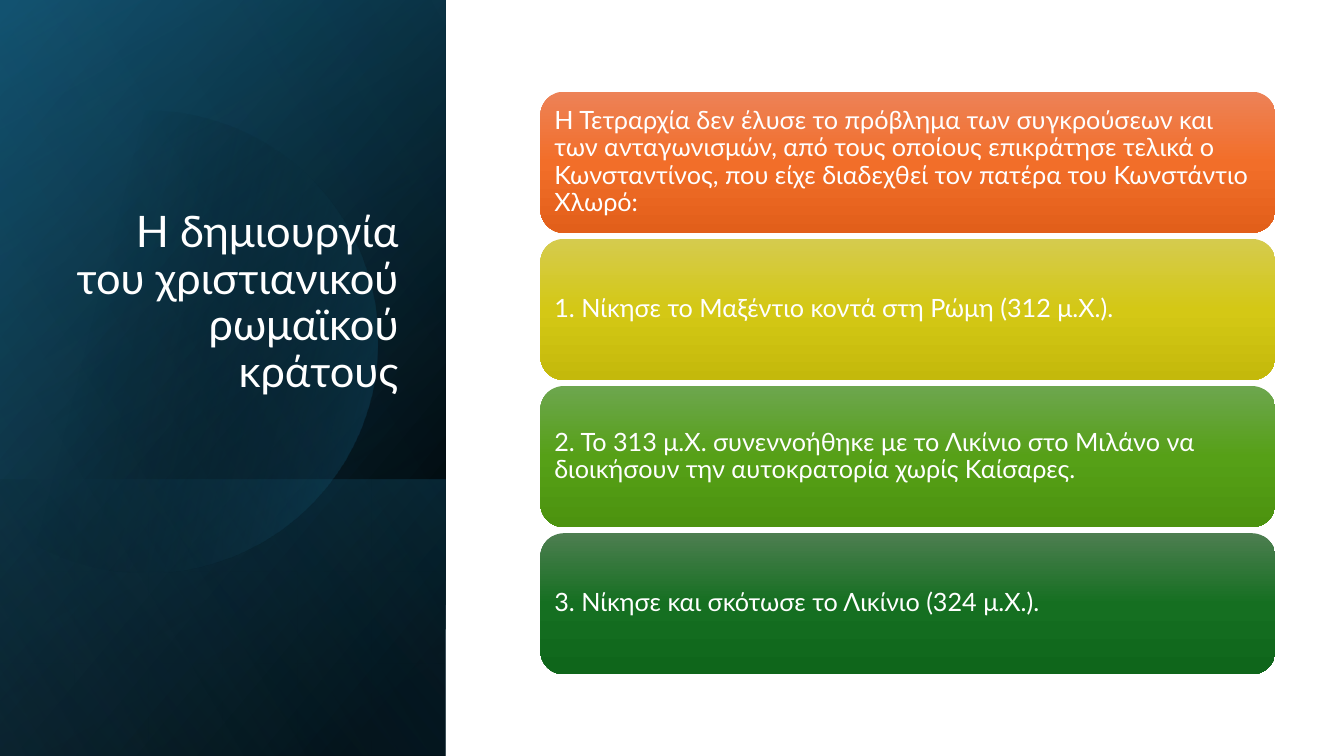
from dataclasses import dataclass
from math import cos, radians, sin

from lxml import etree
from pptx import Presentation
from pptx.dml.color import RGBColor
from pptx.enum.shapes import MSO_SHAPE
from pptx.enum.text import MSO_ANCHOR, PP_ALIGN
from pptx.oxml.ns import qn
from pptx.util import Inches, Pt

RECT = MSO_SHAPE.RECTANGLE
ROUND = MSO_SHAPE.ROUNDED_RECTANGLE
MIDDLE = MSO_ANCHOR.MIDDLE
BOTTOM = MSO_ANCHOR.BOTTOM
LEFT = PP_ALIGN.LEFT
RIGHT = PP_ALIGN.RIGHT


@dataclass(frozen=True)
class Theme:
    font: str = "Lato"
    white: str = "FFFFFF"
    black: str = "000000"
    deep: str = "104862"
    teal: str = "156082"
    sky: str = "46B1E1"
    title: int = 31
    body: int = 18
    orange: tuple = ("ED8257", "F26E29", "E25F1A")
    yellow: tuple = ("D5CB4E", "D4C815", "C4B90B")
    lime: tuple = ("6DA64E", "56A017", "4C930F")
    green: tuple = ("4D7E50", "156F21", "0F661B")


THEME = Theme()

TITLE = "Η δημιουργία του χριστιανικού ρωμαϊκού κράτους"
CARDS = [
    ("Η Τετραρχία δεν έλυσε το πρόβλημα των συγκρούσεων και των "
     "ανταγωνισμών, από τους οποίους επικράτησε τελικά ο Κωνσταντίνος, "
     "που είχε διαδεχθεί τον πατέρα του Κωνστάντιο Χλωρό:", THEME.orange),
    ("1. Νίκησε το Μαξέντιο κοντά στη Ρώμη (312 μ.Χ.).", THEME.yellow),
    ("2. Το 313 μ.Χ. συνεννοήθηκε με το Λικίνιο στο Μιλάνο να "
     "διοικήσουν την αυτοκρατορία χωρίς Καίσαρες.", THEME.lime),
    ("3. Νίκησε και σκότωσε το Λικίνιο (324 μ.Χ.).", THEME.green),
]


def shade(shape, stops, angle):
    shape.shadow.inherit = False
    shape.line.fill.background()
    shape.fill.gradient()
    shape.fill.gradient_angle = 360 - angle
    ramp = shape._element.spPr.find(qn("a:gradFill")).find(qn("a:gsLst"))
    for stop in list(ramp):
        ramp.remove(stop)
    for place, color, alpha in stops:
        stop = etree.SubElement(ramp, qn("a:gs"), pos=str(place * 1000))
        tint = etree.SubElement(stop, qn("a:srgbClr"), val=color)
        if alpha < 100:
            etree.SubElement(tint, qn("a:alpha"), val=str(alpha * 1000))


def write(shape, text, size, align, anchor, inset):
    frame = shape.text_frame
    side, edge = (Inches(gap) for gap in inset)
    look = {"word_wrap": True, "vertical_anchor": anchor,
            "margin_left": side, "margin_right": side,
            "margin_top": edge, "margin_bottom": edge}
    for name, value in look.items():
        setattr(frame, name, value)
    para = frame.paragraphs[0]
    para.text = text
    para.alignment = align
    para.line_spacing = 0.9
    font = para.runs[0].font
    for name, value in {"name": THEME.font, "size": Pt(size)}.items():
        setattr(font, name, value)
    font.color.rgb = RGBColor.from_string(THEME.white)


def add_layer(slide, box, stops, angle):
    x, y, w, h = box
    layer = slide.shapes.add_shape(
        RECT, Inches(x + (w - h) / 2), Inches(y + (h - w) / 2),
        Inches(h), Inches(w))
    layer.rotation = 90
    layer._element.spPr.find(qn("a:xfrm")).set("flipH", "1")
    shade(layer, stops, angle)


def add_disc(slide, box):
    x, y, w, h = box
    mid, level, radius = x + 1.45, y + 3.39, 2.29
    points = [(Inches(mid + radius * cos(radians(turn))),
               Inches(level + radius * sin(radians(turn))))
              for turn in range(-129, 130, 2)]
    build = slide.shapes.build_freeform(*points[0])
    build.add_line_segments(points[1:], close=True)
    shade(build.convert_to_shape(),
          [(29, THEME.black, 0), (100, THEME.teal, 43)], 14)


def add_panel(slide, box):
    x, y, w, h = box
    foot = (x, y + h - 2.74, w, 2.74)
    add_layer(slide, box, [(8, THEME.black, 100), (100, THEME.deep, 100)], 50)
    add_layer(slide, box, [(0, THEME.black, 0), (99, THEME.teal, 46)], 30)
    add_layer(slide, foot, [(2, THEME.teal, 29), (100, THEME.black, 30)], 130)
    add_disc(slide, box)
    add_layer(slide, box, [(0, THEME.black, 0), (99, THEME.sky, 11)], 120)
    title = slide.shapes.add_textbox(
        Inches(x + 0.64), Inches(y + 1.84), Inches(3.41), Inches(2.15))
    write(title, TITLE, THEME.title, RIGHT, BOTTOM, (0.1, 0.05))


def add_cards(slide, box):
    x, y, w, h = box
    gap = 0.06
    tall = (h - gap * (len(CARDS) - 1)) / len(CARDS)
    for row, (text, colors) in enumerate(CARDS):
        card = slide.shapes.add_shape(
            ROUND, Inches(x), Inches(y + row * (tall + gap)),
            Inches(w), Inches(tall))
        shade(card, [(50 * step, color, 100)
                     for step, color in enumerate(colors)], 90)
        write(card, text, THEME.body, LEFT, MIDDLE, (0.07, 0.07))


def main():
    deck = Presentation()
    deck.slide_width = Inches(13.33)
    deck.slide_height = Inches(7.5)
    slide = deck.slides.add_slide(deck.slide_layouts[6])
    add_panel(slide, (0, 0, 4.42, 7.5))
    add_cards(slide, (5.36, 0.91, 7.29, 5.78))
    deck.save("out.pptx")


if __name__ == "__main__":
    main()
